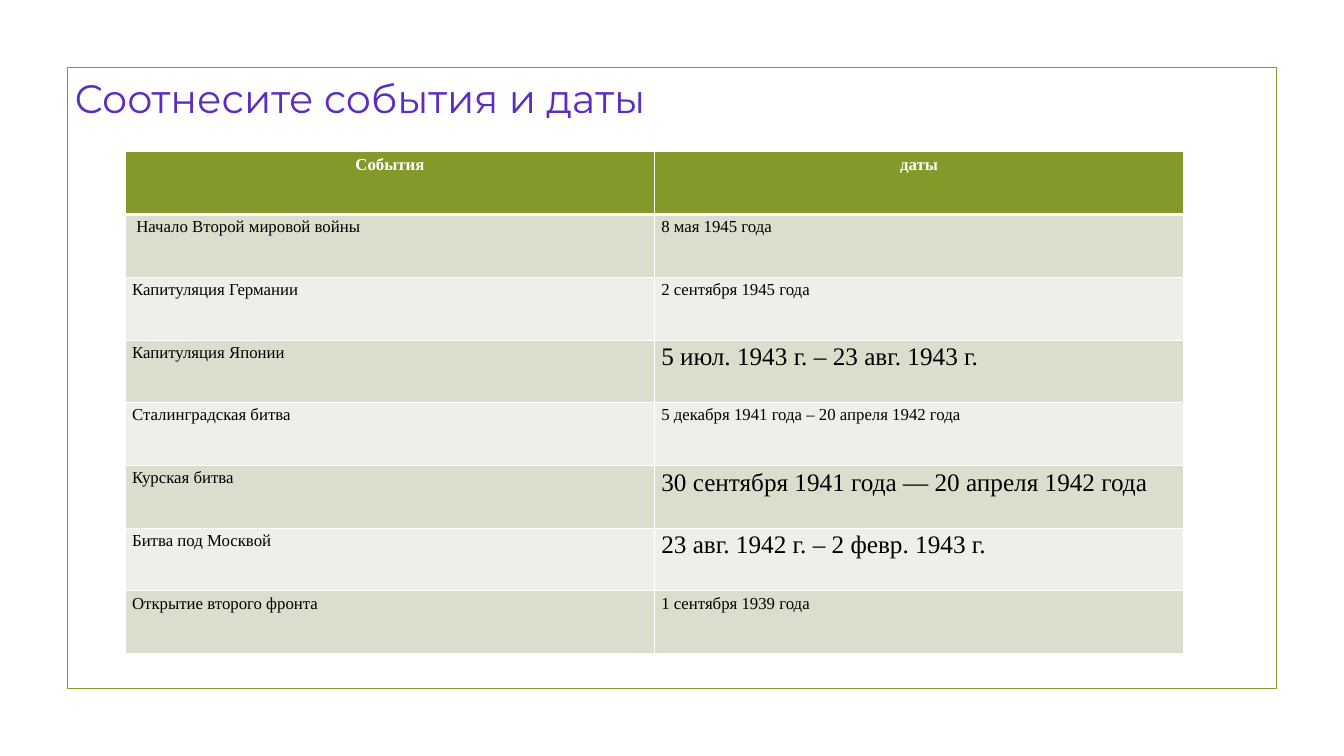
from lxml.etree import SubElement
from pptx import Presentation
from pptx.dml.color import RGBColor
from pptx.enum.shapes import MSO_SHAPE as Shape
from pptx.enum.text import MSO_ANCHOR as Anchor, MSO_AUTO_SIZE as AutoSize, PP_ALIGN as Align
from pptx.oxml.ns import qn
from pptx.util import Cm, Pt

COLORS = {
    "frame": "83992A",
    "title": "5C2DBE",
    "header": "83992A",
    "odd": "D9DECD",
    "even": "EDEFE8",
    "white": "FFFFFF",
    "black": "000000",
}
BODY_FONT = "Times New Roman"
NORMAL, LARGE = 18, 27

HEADINGS = ("События", "даты")
# Event, date, size of the date
MATCHES = [
    (" Начало Второй мировой войны", "8 мая 1945 года", NORMAL),
    ("Капитуляция Германии", "2 сентября 1945 года", NORMAL),
    ("Капитуляция Японии", "5 июл. 1943 г. – 23 авг. 1943 г.", LARGE),
    ("Сталинградская битва", "5 декабря 1941 года – 20 апреля 1942 года", NORMAL),
    ("Курская битва", "30 сентября 1941 года — 20 апреля 1942 года", LARGE),
    ("Битва под Москвой", "23 авг. 1942 г. – 2 февр. 1943 г.", LARGE),
    ("Открытие второго фронта", "1 сентября 1939 года", NORMAL),
]


def color(name):
    return RGBColor.from_string(COLORS[name])


def add_run(paragraph, text, size, font, color_name, bold=False):
    run = paragraph.add_run()
    run.text = text
    run.font.size = Pt(size)
    run.font.name = font
    run.font.bold = bold
    run.font.color.rgb = color(color_name)


def add_frame(slide, left, top, width, height):
    frame = slide.shapes.add_shape(Shape.RECTANGLE, left, top, width, height)
    frame.shadow.inherit = False
    frame.fill.background()
    frame.line.color.rgb = color("frame")
    frame.line.width = Pt(1.25)


def place_title(slide, left, top, width, height):
    title = slide.shapes.title
    title.left, title.top, title.width, title.height = left, top, width, height
    text = title.text_frame
    text.margin_left = text.margin_top = text.margin_right = text.margin_bottom = 0
    text.word_wrap = True
    text.auto_size = AutoSize.SHAPE_TO_FIT_TEXT
    text.vertical_anchor = Anchor.TOP
    heading = text.paragraphs[0]
    heading.alignment = Align.LEFT
    add_run(heading, "Соотнесите события и даты", 42.5, "Montserrat", "title")


def set_borders(cell, **widths):
    properties = cell._tc.get_or_add_tcPr()
    for side in "LRTB":
        border = SubElement(properties, qn(f"a:ln{side}"), w=str(Pt(widths.get(side, 1))))
        fill = SubElement(border, qn("a:solidFill"))
        SubElement(fill, qn("a:srgbClr"), val=COLORS["white"])


def fill_cell(cell, fill_name):
    cell.fill.solid()
    cell.fill.fore_color.rgb = color(fill_name)


def add_matches(slide, left, top, width, height):
    row_count = len(MATCHES) + 1
    table = slide.shapes.add_table(row_count, 2, left, top, width, height).table
    for column in table.columns:
        column.width = int(width / 2)
    for row in table.rows:
        row.height = int(height / row_count)

    # Header row, with a thick rule below
    for cell, heading in zip(table.rows[0].cells, HEADINGS):
        set_borders(cell, B=3)
        fill_cell(cell, "header")
        paragraph = cell.text_frame.paragraphs[0]
        paragraph.alignment = Align.CENTER
        add_run(paragraph, heading, NORMAL, BODY_FONT, "white", bold=True)

    # Banded rows of events and dates
    for number, (event, date, date_size) in enumerate(MATCHES, start=1):
        entries = ((event, NORMAL), (date, date_size))
        for cell, (text, size) in zip(table.rows[number].cells, entries):
            set_borders(cell, T=3 if number == 1 else 1)
            fill_cell(cell, "odd" if number % 2 else "even")
            add_run(cell.text_frame.paragraphs[0], text, size, BODY_FONT, "black")


def main():
    deck = Presentation()
    deck.slide_width, deck.slide_height = Cm(50.8), Cm(28.58)
    slide = deck.slides.add_slide(deck.slide_layouts[5])
    add_frame(slide, Cm(2.54), Cm(2.54), Cm(45.72), Cm(23.5))
    place_title(slide, Cm(2.82), Cm(2.8), Cm(45.16), Cm(1.88))
    add_matches(slide, Cm(4.74), Cm(5.74), Cm(40), Cm(18.96))
    deck.save("out.pptx")


if __name__ == "__main__":
    main()
